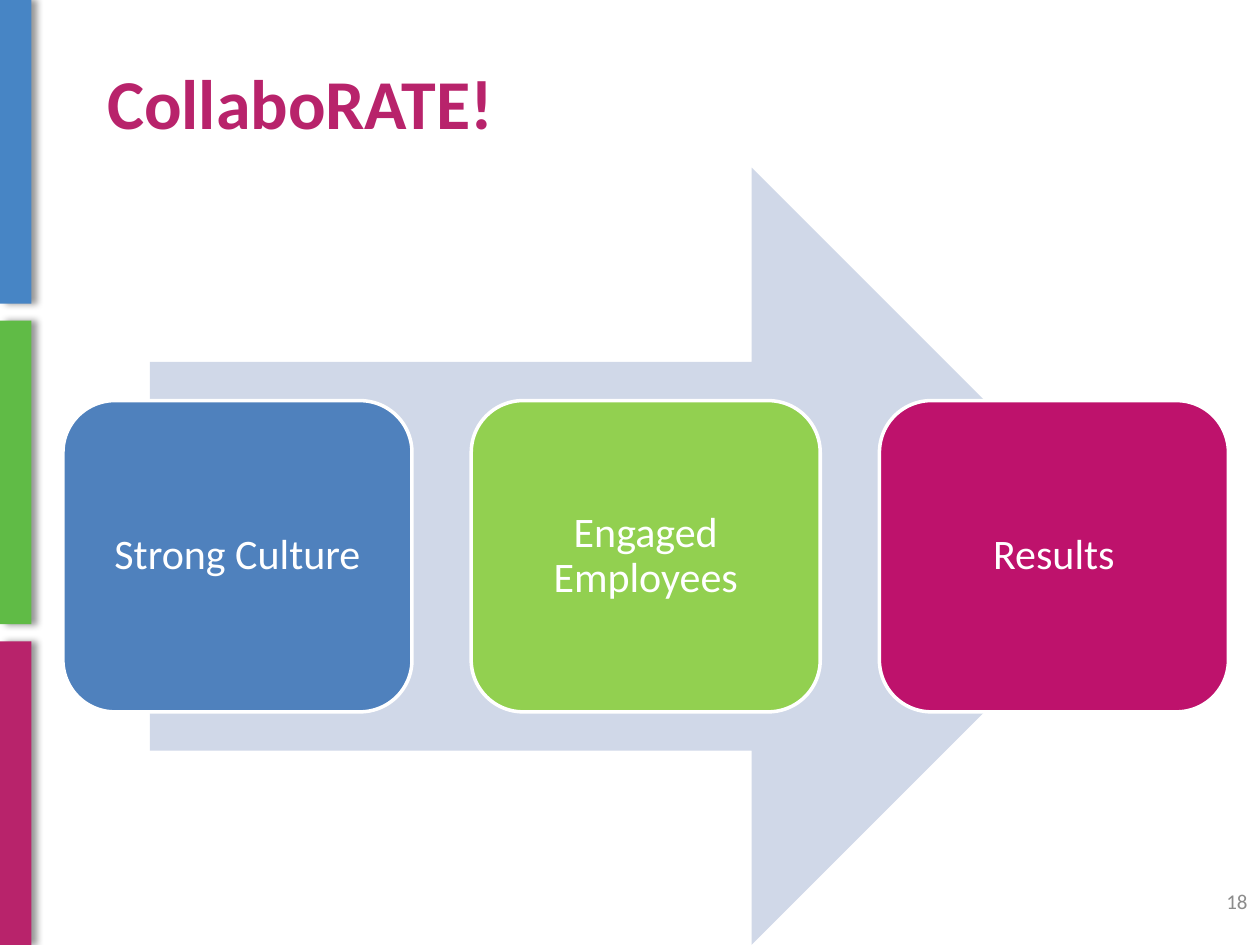
"""Build the CollaboRATE! slide: an arrow leading from culture to results."""
from lxml import etree
from pptx import Presentation
from pptx.dml.color import RGBColor
from pptx.enum.shapes import MSO_SHAPE
from pptx.enum.text import MSO_ANCHOR, PP_ALIGN
from pptx.oxml import parse_xml
from pptx.util import Inches, Pt

SHADOW = (
    '<a:effectLst xmlns:a="http://schemas.openxmlformats.org/drawingml/2006/main">'
    '<a:outerShdw blurRad="50800" dist="38100" dir="0" algn="l" rotWithShape="0">'
    '<a:srgbClr val="000000"><a:alpha val="40000"/></a:srgbClr>'
    '</a:outerShdw></a:effectLst>'
)


def set_text(sp, text, size=24, color="FFFFFF", bold=False, align=PP_ALIGN.CENTER,
             anchor=MSO_ANCHOR.MIDDLE, spacing=None):
    tf = sp.text_frame
    tf.word_wrap = True
    tf.vertical_anchor = anchor
    p = tf.paragraphs[0]
    p.alignment = align
    p.line_spacing = spacing
    r = p.add_run()
    r.text = text
    r.font.name = "Calibri"
    r.font.size = Pt(size)
    r.font.bold = bold
    r.font.color.rgb = RGBColor.from_string(color)


def add_box(shapes, kind, x, y, w, h, fill):
    sp = shapes.add_shape(kind, Inches(x), Inches(y), Inches(w), Inches(h))
    sp.shadow.inherit = False
    sp.fill.solid()
    sp.fill.fore_color.rgb = RGBColor.from_string(fill)
    sp.line.fill.background()
    return sp


prs = Presentation()
prs.slide_width, prs.slide_height = Inches(10), Inches(7.5)
s = prs.slides.add_slide(prs.slide_layouts[5])

bar_h = 2.41
bar_pitch = (7.5 - bar_h) / 2
for i, color in enumerate(["4785C5", "60BB46", "B8236B"]):
    bar = add_box(s.shapes, MSO_SHAPE.RECTANGLE, 0, i * bar_pitch, 0.25, bar_h, color)
    effects = bar.element.spPr.find("{*}effectLst")
    effects.getparent().replace(effects, parse_xml(SHADOW))

title = s.shapes.title
title.left, title.top = Inches(0.75), Inches(0.42)
title.width, title.height = Inches(9), Inches(1)
set_text(title, "CollaboRATE!", size=40, color="B8236B", bold=True,
         align=PP_ALIGN.LEFT, anchor=MSO_ANCHOR.TOP)

number = s.shapes.add_textbox(Inches(7.67), Inches(6.95), Inches(2.33), Inches(0.4))
set_text(number, "18", size=12, color="8C8C8C", align=PP_ALIGN.RIGHT)

process = s.shapes.add_group_shape()
add_box(process.shapes, MSO_SHAPE.RIGHT_ARROW, 1.19, 1.33, 7.86, 6.17, "D0D8E8")
steps = [("Strong Culture", "4F81BD"), ("Engaged Employees", "92D050"), ("Results", "BE126C")]
for i, (text, color) in enumerate(steps):
    step = add_box(process.shapes, MSO_SHAPE.ROUNDED_RECTANGLE,
                   0.5 + i * 3.24, 3.18, 2.77, 2.47, color)
    step.line.color.rgb = RGBColor.from_string("FFFFFF")
    step.line.width = Pt(2)
    set_text(step, text, spacing=0.9)

prs.save("out.pptx")
